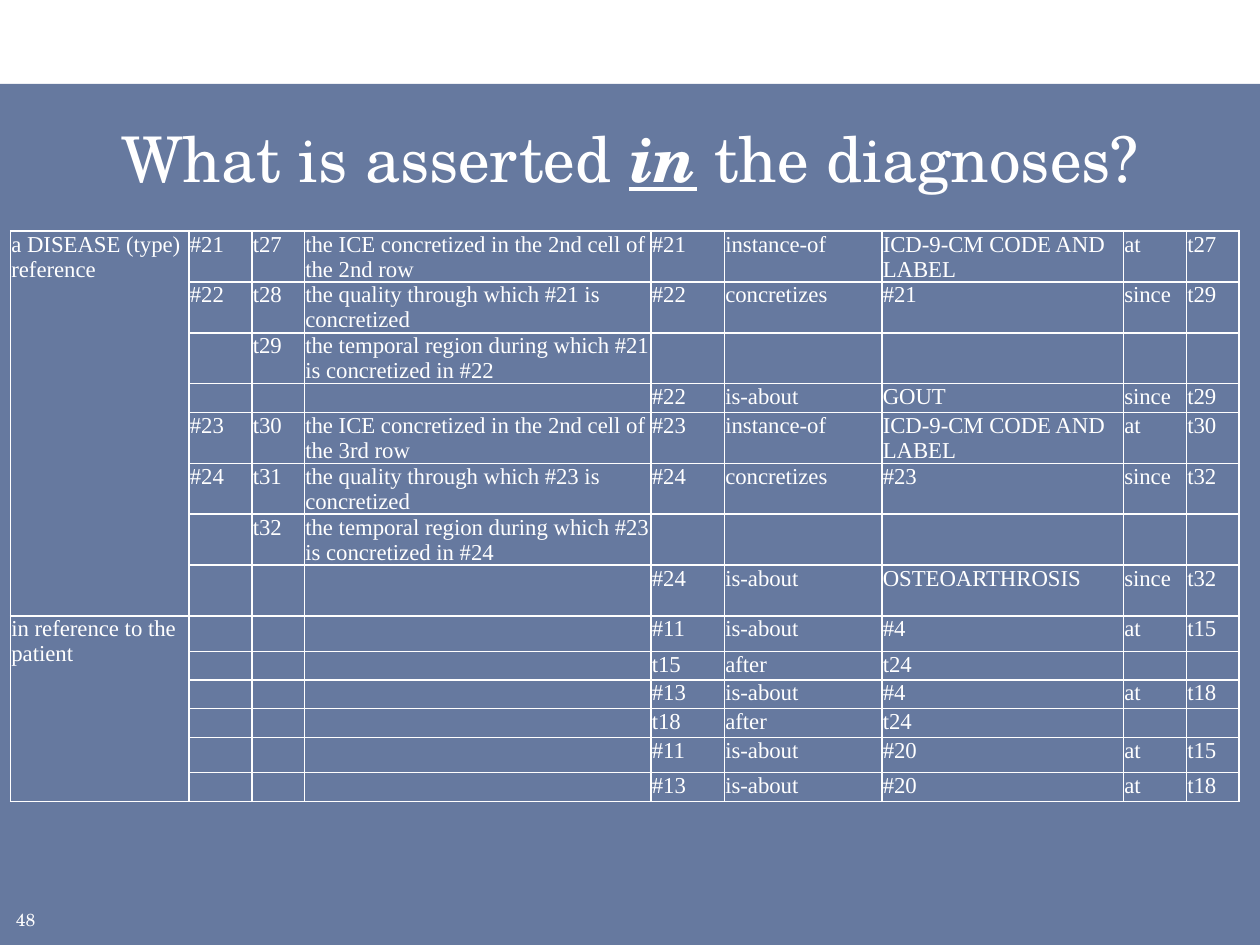
from lxml.etree import SubElement
from pptx import Presentation
from pptx.dml.color import RGBColor
from pptx.enum.shapes import MSO_SHAPE
from pptx.enum.text import MSO_ANCHOR, PP_ALIGN
from pptx.oxml.ns import qn
from pptx.util import Pt

COLORS = {"band": "002060", "text": "FFFFFF", "border": "FFFFFF"}
HEADING_FONT, TABLE_FONT = "TeX Gyre Schola", "Times New Roman"
TABLE_SIZE = 13

COLUMN_WIDTHS = [102, 36, 30, 198, 42, 90, 138, 36, 30]
SINGLE, ROOMY, DOUBLE = 16.4, 20.2, 29.1
ROW_HEIGHTS = ([DOUBLE] * 3 + [SINGLE] + [DOUBLE] * 4
               + [ROOMY] + [SINGLE] * 3 + [ROOMY, SINGLE])


def diagnosis_rows(ice, quality, start, found, region, ordinal, disease):
    """Return the four assertions made about one diagnosis."""
    return [
        [ice, start, f"the ICE concretized in the 2nd cell of the {ordinal} row",
         ice, "instance-of", "ICD-9-CM CODE AND LABEL", "at", start],
        [quality, found, f"the quality through which {ice} is concretized",
         quality, "concretizes", ice, "since", region],
        ["", region, f"the temporal region during which {ice} is concretized in {quality}"]
        + [""] * 5,
        ["", "", "", quality, "is-about", disease, "since", region],
    ]


PATIENT_ASSERTIONS = [
    ["#11", "is-about", "#4", "at", "t15"],
    ["t15", "after", "t24", "", ""],
    ["#13", "is-about", "#4", "at", "t18"],
    ["t18", "after", "t24", "", ""],
    ["#11", "is-about", "#20", "at", "t15"],
    ["#13", "is-about", "#20", "at", "t18"],
]
GROUPS = [
    ("a DISEASE (type) reference",
     diagnosis_rows("#21", "#22", "t27", "t28", "t29", "2nd", "GOUT")
     + diagnosis_rows("#23", "#24", "t30", "t31", "t32", "3rd", "OSTEOARTHROSIS")),
    ("in reference to the patient",
     [[""] * 3 + assertion for assertion in PATIENT_ASSERTIONS]),
]


class SlideBuilder:
    def __init__(self, slide):
        self.slide = slide

    def add_text(self, paragraph, text, **font_format):
        run = paragraph.add_run()
        run.text = text
        run.font.color.rgb = RGBColor.from_string(COLORS["text"])
        for attribute, value in font_format.items():
            setattr(run.font, attribute, value)

    def band(self, left, top, width, height, opacity):
        band = self.slide.shapes.add_shape(
            MSO_SHAPE.RECTANGLE, Pt(left), Pt(top), Pt(width), Pt(height))
        band.shadow.inherit = False
        band.fill.solid()
        band.fill.fore_color.rgb = RGBColor.from_string(COLORS["band"])
        band.line.fill.background()
        color = band._element.spPr.find(qn("a:solidFill")).find(qn("a:srgbClr"))
        SubElement(color, qn("a:alpha"), val=str(opacity * 1000))
        self.slide.shapes._spTree.insert(2, band._element)

    def title(self, left, top, width, height, parts):
        title = self.slide.shapes.title
        bounds = {"left": left, "top": top, "width": width, "height": height}
        for attribute, value in bounds.items():
            setattr(title, attribute, Pt(value))
        title.text_frame.vertical_anchor = MSO_ANCHOR.MIDDLE
        paragraph = title.text_frame.paragraphs[0]
        paragraph.alignment = PP_ALIGN.CENTER
        for text, emphasis in parts:
            self.add_text(paragraph, text, name=HEADING_FONT, size=Pt(36),
                          bold=emphasis, italic=emphasis, underline=emphasis)

    def page_number(self, left, top, width, height, number):
        box = self.slide.shapes.add_textbox(Pt(left), Pt(top), Pt(width), Pt(height))
        box.text_frame.word_wrap = True
        self.add_text(box.text_frame.paragraphs[0], number,
                      name=HEADING_FONT, size=Pt(10))

    def table(self, left, top, groups):
        table = self.slide.shapes.add_table(
            len(ROW_HEIGHTS), len(COLUMN_WIDTHS), Pt(left), Pt(top),
            Pt(sum(COLUMN_WIDTHS)), Pt(sum(ROW_HEIGHTS))).table
        table.first_row = table.horz_banding = False
        for column, width in zip(table.columns, COLUMN_WIDTHS):
            column.width = Pt(width)
        for row, height in zip(table.rows, ROW_HEIGHTS):
            row.height = Pt(height)
        first = 0
        for heading, rows in groups:
            for offset, texts in enumerate(rows):
                labels = ["" if offset else heading] + texts
                for column, text in enumerate(labels):
                    self.cell(table.cell(first + offset, column), text)
            last = first + len(rows) - 1
            table.cell(first, 0).merge(table.cell(last, 0))
            first = last + 1

    def cell(self, cell, text):
        margins = {"margin_left": 0.5, "margin_top": 0.5,
                   "margin_right": 0.5, "margin_bottom": 0}
        for attribute, value in margins.items():
            setattr(cell, attribute, Pt(value))
        paragraph = cell.text_frame.paragraphs[0]
        if text:
            self.add_text(paragraph, text, name=TABLE_FONT, size=Pt(TABLE_SIZE))
        else:
            end = SubElement(paragraph._p, qn("a:endParaRPr"), sz=str(TABLE_SIZE * 100))
            SubElement(end, qn("a:latin"), typeface=TABLE_FONT)
        properties = cell._tc.get_or_add_tcPr()
        for side in ("lnL", "lnR", "lnT", "lnB"):
            border = SubElement(properties, qn(f"a:{side}"), w=str(Pt(1)))
            fill = SubElement(border, qn("a:solidFill"))
            SubElement(fill, qn("a:srgbClr"), val=COLORS["border"])
        cell.fill.background()


def main():
    presentation = Presentation()
    presentation.slide_width, presentation.slide_height = Pt(720), Pt(540)
    title_only = presentation.slide_layouts[5]
    builder = SlideBuilder(presentation.slides.add_slide(title_only))
    builder.band(0, 48, 720, 492, opacity=60)
    builder.title(18, 60, 684, 60, [("What is asserted ", False), ("in", True),
                                    (" the diagnoses?", False)])
    builder.table(6, 132, GROUPS)
    builder.page_number(2, 516, 28, 18, "48")
    presentation.save("out.pptx")


if __name__ == "__main__":
    main()
